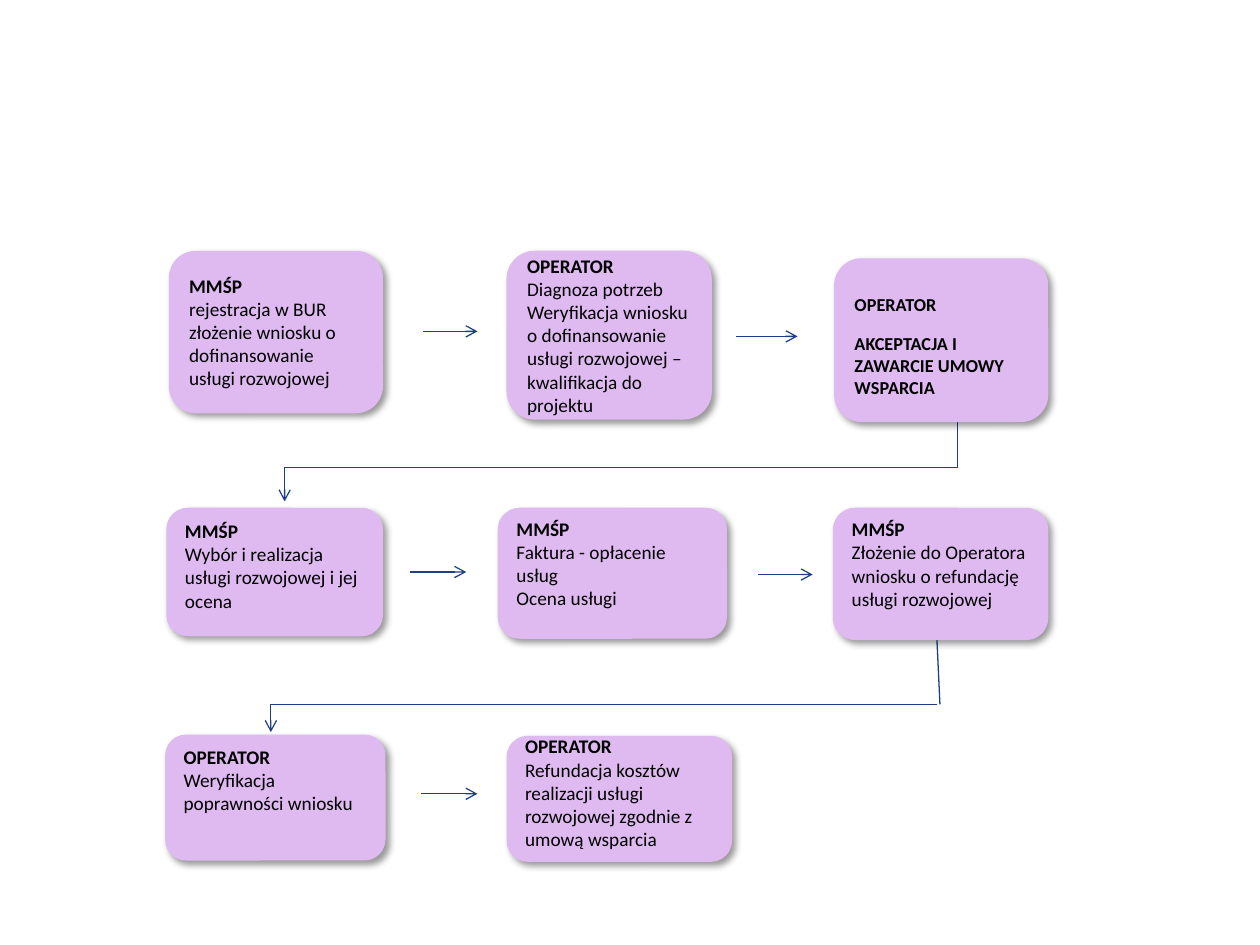
from lxml.etree import SubElement
from pptx import Presentation
from pptx.dml.color import RGBColor
from pptx.enum.shapes import MSO_CONNECTOR as Link, MSO_SHAPE as Shape
from pptx.enum.text import MSO_ANCHOR as Anchor, PP_ALIGN as Align
from pptx.oxml.ns import qn
from pptx.util import Inches, Pt

FONT, INK, LILAC, NAVY = "Calibri", "000000", "DFBAF0", "1F3F83"
INSET = 0.05

# who, actions, (left, top, width, height), upward shift of the text, text format
STEPS = [
    ("MMŚP", ["rejestracja w BUR złożenie wniosku o dofinansowanie usługi rozwojowej"],
     (1.34, 1.99, 1.7, 1.29), 0, {}),
    ("OPERATOR", ["Diagnoza potrzeb",
                  "Weryfikacja wniosku o dofinansowanie usługi rozwojowej – kwalifikacja do projektu"],
     (4.02, 1.99, 1.63, 1.34), 0, {}),
    ("OPERATOR", ["AKCEPTACJA I ZAWARCIE UMOWY WSPARCIA"],
     (6.62, 2.05, 1.7, 1.3), -0.04, {"size": 10.4, "bold": True, "gap": 10}),
    ("MMŚP", ["Wybór i realizacja usługi rozwojowej i jej ocena"],
     (1.32, 4.03, 1.72, 1.02), 0.05, {}),
    ("MMŚP", ["Faktura - opłacenie usług", "Ocena usługi"],
     (3.95, 4.03, 1.82, 1.04), 0.08, {}),
    ("MMŚP", ["Złożenie do Operatora wniosku o refundację usługi rozwojowej"],
     (6.61, 4.03, 1.71, 1.05), 0.08, {}),
    ("OPERATOR", ["Weryfikacja poprawności wniosku"],
     (1.31, 5.83, 1.75, 1), 0.14, {}),
    ("OPERATOR", ["Refundacja kosztów realizacji usługi rozwojowej zgodnie z umową wsparcia"],
     (4.02, 5.84, 1.79, 1), 0.05, {}),
]
# from x, from y, to x, to y
RISERS = [(7.46, 5.59, 7.43, 4.95), (7.6, 3.71, 7.6, 3.04)]
ARROWS = [(3.36, 2.63, 3.79, 2.63), (5.84, 2.67, 6.33, 2.67),
          (3.25, 4.54, 3.7, 4.54), (6.02, 4.56, 6.45, 4.56),
          (3.34, 6.3, 3.79, 6.3)]
RETURNS = [(7.6, 3.71, 2.26, 3.98), (7.44, 5.59, 2.15, 5.81)]


def color(code):
    """Turn a hex string into a colour."""
    return RGBColor.from_string(code)


def write(paragraph, text, size=11, bold=False, gap=0):
    """Fill one paragraph with formatted text."""
    paragraph.alignment = Align.LEFT
    paragraph.space_before = Pt(gap)
    run = paragraph.add_run()
    run.text = text
    run.font.name, run.font.size, run.font.bold = FONT, Pt(size), bold
    run.font.color.rgb = color(INK)


def add_shadow(step):
    """Give a step a soft shadow to the lower right."""
    step.shadow.inherit = False
    effects = step._element.spPr.find(qn("a:effectLst"))
    outer = SubElement(effects, qn("a:outerShdw"), blurRad=str(Pt(4)), dist=str(Pt(3)),
                       dir="2700000", algn="tl", rotWithShape="0")
    black = SubElement(outer, qn("a:srgbClr"), val=INK)
    SubElement(black, qn("a:alpha"), val="40000")


def add_step(slide, who, actions, place, lift, style):
    """Draw one rounded step with its actor and actions."""
    step = slide.shapes.add_shape(Shape.ROUNDED_RECTANGLE, *map(Inches, place))
    step.fill.solid()
    step.fill.fore_color.rgb = color(LILAC)
    step.line.fill.background()
    add_shadow(step)
    frame = step.text_frame
    frame.word_wrap = True
    frame.vertical_anchor = Anchor.MIDDLE
    frame.margin_top = Inches(INSET + 2 * max(-lift, 0))
    frame.margin_bottom = Inches(INSET + 2 * max(lift, 0))
    write(frame.paragraphs[0], who, **{**style, "bold": True, "gap": 0})
    for action in actions:
        write(frame.add_paragraph(), action, **style)


def add_arrow(slide, ends, bent=False):
    """Draw an arrow, straight or with a single corner."""
    arrow = slide.shapes.add_connector(Link.ELBOW if bent else Link.STRAIGHT, *map(Inches, ends))
    arrow.line.color.rgb = color(NAVY)
    arrow.line.width = Pt(0.75)
    properties = arrow._element.spPr
    if bent:
        properties.find(qn("a:prstGeom")).set("prst", "bentConnector2")
    SubElement(properties.find(qn("a:ln")), qn("a:tailEnd"), type="arrow")
    SubElement(properties, qn("a:effectLst"))


def main():
    """Build the process slide."""
    deck = Presentation()
    deck.slide_width, deck.slide_height = Inches(10), Inches(7.5)
    slide = deck.slides.add_slide(deck.slide_layouts[6])
    for ends in RISERS:
        add_arrow(slide, ends)
    for step in STEPS:
        add_step(slide, *step)
    for ends in ARROWS:
        add_arrow(slide, ends)
    for ends in RETURNS:
        add_arrow(slide, ends, bent=True)
    deck.save("out.pptx")


if __name__ == "__main__":
    main()
